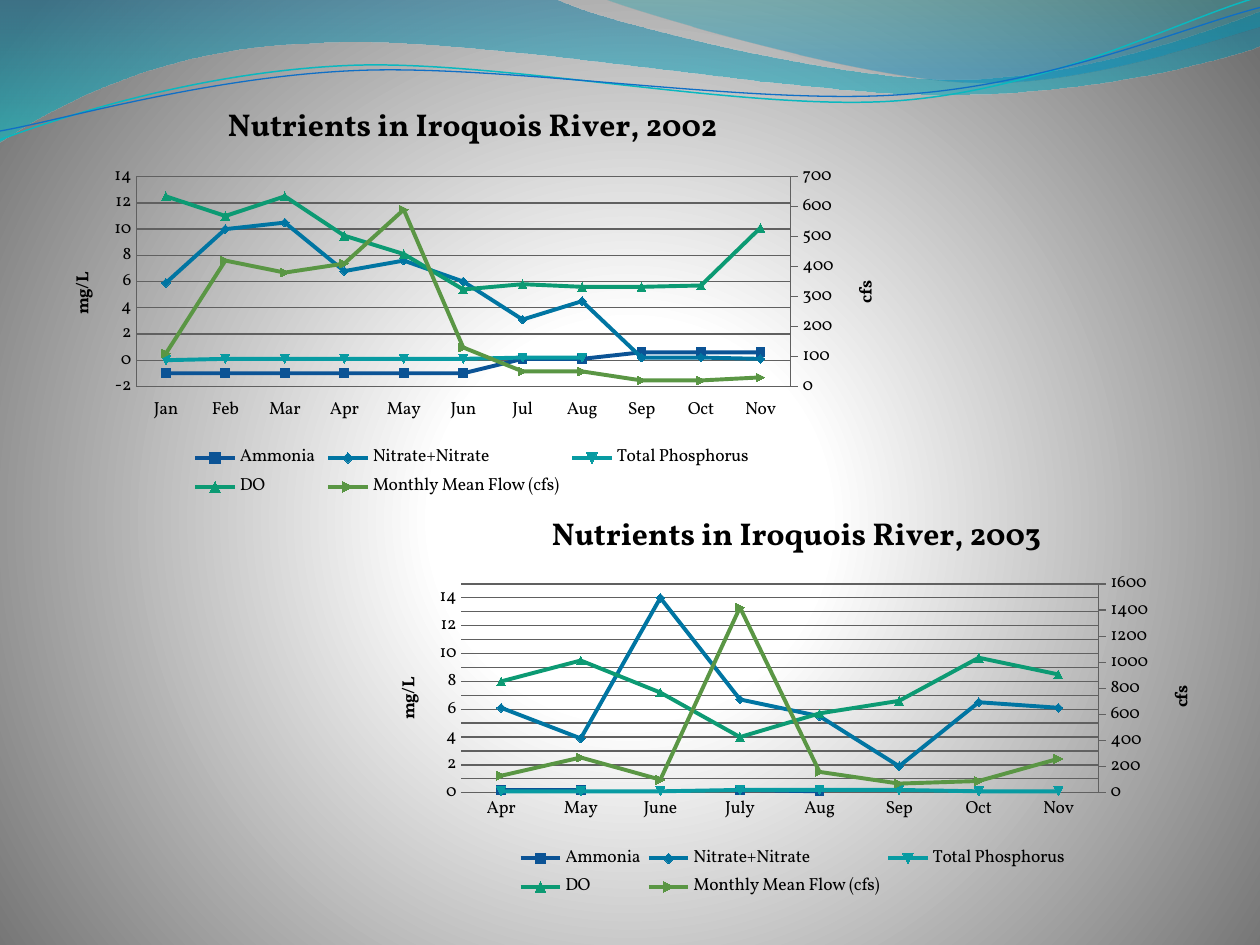
"""Build a slide with two nutrient charts for the Iroquois River under a wave banner."""
import copy
import math

import pptx
import pptx.chart.data
import pptx.dml.color
import pptx.enum.chart
import pptx.oxml
import pptx.oxml.ns
import pptx.util

Inches, Pt = pptx.util.Inches, pptx.util.Pt
hue = pptx.dml.color.RGBColor.from_string
qn, nsdecls = pptx.oxml.ns.qn, pptx.oxml.ns.nsdecls
kinds = pptx.enum.chart


def fade(node, stops, way):
    marks = "".join(
        f'<a:gs pos="{pos * 1000}"><a:srgbClr val="{tone}"><a:alpha val="{alpha * 1000}"/></a:srgbClr></a:gs>'
        for pos, tone, alpha in stops)
    old = node.find(".//" + qn("a:gradFill"))
    old.getparent().replace(old, pptx.oxml.parse_xml(
        f'<a:gradFill {nsdecls("a")} rotWithShape="1"><a:gsLst>{marks}</a:gsLst>{way}</a:gradFill>'))


def place(node, prior, spot):
    for old in node.findall(qn("c:layout")):
        node.remove(old)
    mode = '<c:layoutTarget val="inner"/>' if prior is None else ""
    mode += '<c:xMode val="edge"/><c:yMode val="edge"/>'
    sides = "".join(f'<c:{key} val="{size}"/>' for key, size in zip("xywh", spot))
    layout = pptx.oxml.parse_xml(
        f'<c:layout {nsdecls("c")}><c:manualLayout>{mode}{sides}</c:manualLayout></c:layout>')
    if prior is None:
        node.insert(0, layout)
    else:
        node.find(qn(prior)).addnext(layout)


deck = pptx.Presentation()
deck.slide_width, deck.slide_height = Inches(10), Inches(7.5)
slide = deck.slides.add_slide(deck.slide_layouts[6])
slide.background.fill.gradient()
fade(slide._element, [(0, "FFFFFF", 100), (25, "FFFFFF", 100), (100, "707070", 100)],
     '<a:path path="circle"><a:fillToRect l="10000" t="110000" r="10000" b="100000"/></a:path>')

waves = [
    ([(0, 0), (4.4, -0.01), (4.76, 0.17, 6.64, 0.63, 7.58, 0.63), (8.53, 0.63, 9.58, 0.26, 10, 0.09),
      (10.01, 0.36), (9.83, 0.44, 8.7, 0.76, 7.46, 0.75), (6.22, 0.75, 3.82, 0.28, 2.57, 0.34),
      (1.29, 0.36, 0.46, 0.83, -0.01, 1.13)], [(0, "0074A1", 45), (100, "00C6CF", 55)], None, 0),
    ([(4.79, -0.01), (5.09, 0.11, 6.82, 0.62, 7.69, 0.65), (8.56, 0.69, 9.61, 0.32, 10, 0.21),
      (10, 0)], [(0, "00A1A9", 30), (80, "008BBF", 45)], None, 0),
    ([(0, 1.11), (0.48, 0.93, 1.58, 0.57, 2.77, 0.52), (3.95, 0.47, 5.93, 0.89, 7.13, 0.8),
      (8.33, 0.71, 9.38, 0.15, 9.98, -0.02)], None, ("0AB8BF", 0.85), -2.7),
    ([(0, 1.04), (0.47, 0.96, 1.64, 0.61, 2.83, 0.56), (4.03, 0.51, 5.97, 0.84, 7.17, 0.75),
      (8.36, 0.67, 9.41, 0.21, 10, 0.06)], None, ("0F6FC6", 0.75), -2.7),
]
for parts, stops, stroke, tilt in waves:
    cos, sin = math.cos(math.radians(-tilt)), math.sin(math.radians(-tilt))
    midx, midy = 5, 0.58
    dots = []
    for part in parts:
        for x, y in zip(part[::2], part[1::2]):
            dx, dy = x - midx, y - midy
            dots.append((Inches(midx + dx * cos - dy * sin), Inches(midy + dx * sin + dy * cos)))
    pen = slide.shapes.build_freeform(*dots[0])
    pen.add_line_segments(dots[1:], close=stops is not None)
    wave = pen.convert_to_shape()
    legs = iter(wave._element.findall(".//" + qn("a:lnTo")))
    for part in parts[1:]:
        leg = next(legs)
        if len(part) == 6:
            curve = pptx.oxml.parse_xml(f'<a:cubicBezTo {nsdecls("a")}/>')
            leg.addprevious(curve)
            for piece in (leg, next(legs), next(legs)):
                curve.append(piece[0])
                piece.getparent().remove(piece)
    wave.rotation = tilt
    wave.shadow.inherit = False
    if stops:
        wave.line.fill.background()
        wave.fill.gradient()
        fade(wave._element, stops, '<a:lin ang="5400000" scaled="0"/>')
    else:
        wave.fill.background()
        wave.line.color.rgb = hue(stroke[0])
        wave.line.width = Pt(stroke[1])

names = ["Ammonia", "Nitrate+Nitrate", "Total Phosphorus", "DO", "Monthly Mean Flow (cfs)"]
tones = ["0B5395", "0075A2", "089BA2", "0C9A73", "5A9644"]
ticks = kinds.XL_TICK_LABEL_POSITION
charts = [
    {"year": 2002, "box": (0.33, 0.67, 6.83, 3.33), "plot": (0.11, 0.22, 0.76, 0.5),
     "left": (-2, 14, 2), "right": (0, 700, 100), "form": "General", "spot": ticks.LOW,
     "cats": "Jan Feb Mar Apr May Jun Jul Aug Sep Oct Nov".split(),
     "rows": [[-1, -1, -1, -1, -1, -1, 0.1, 0.1, 0.6, 0.6, 0.6],
              [5.9, 10, 10.5, 6.8, 7.6, 6, 3.1, 4.5, 0.2, 0.2, 0.1],
              [0, 0.1, 0.1, 0.1, 0.1, 0.1, 0.2, 0.2, None, None, None],
              [12.5, 11, 12.5, 9.5, 8.1, 5.4, 5.8, 5.6, 5.6, 5.7, 10.1],
              [110, 420, 380, 410, 590, 130, 50, 50, 20, 20, 30]]},
    {"year": 2003, "box": (2.92, 3.92, 6.74, 3.25), "plot": (0.11, 0.22, 0.75, 0.51),
     "left": (0, 15, 1), "right": (0, 1600, 200), "form": "0", "spot": ticks.NEXT_TO_AXIS,
     "cats": "Apr May June July Aug Sep Oct Nov".split(),
     "rows": [[0.2, 0.2, None, 0.2, 0.1, None, None, None],
              [6.1, 3.9, 14, 6.7, 5.5, 1.9, 6.5, 6.1],
              [0.1, 0.1, 0.1, 0.2, 0.2, 0.2, 0.1, 0.1],
              [8, 9.5, 7.2, 4, 5.7, 6.6, 9.7, 8.5],
              [130, 270, 100, 1420, 160, 70, 90, 260]]},
]
for item in charts:
    data = pptx.chart.data.CategoryChartData()
    data.categories = item["cats"]
    for name, row in zip(names, item["rows"]):
        data.add_series(name, row)
    box = [Inches(side) for side in item["box"]]
    chart = slide.shapes.add_chart(kinds.XL_CHART_TYPE.LINE_MARKERS, *box, data).chart
    chart.font.name, chart.font.size = "Vollkorn", Pt(10)
    chart.font.color.rgb = hue("000000")
    chart.plots[0].vary_by_categories = False
    for line, tone in zip(chart.plots[0].series, tones):
        line.smooth = False
        line.format.line.color.rgb = hue(tone)
        line.format.line.width = Pt(2.25)

    chart.has_legend = True
    chart.legend.position = kinds.XL_LEGEND_POSITION.BOTTOM
    chart.legend.include_in_layout = False
    place(chart.legend._element, "c:legendPos", (0.17, 0.85, 0.66, 0.15))

    cat, val = chart.category_axis, chart.value_axis
    cat.tick_label_position = item["spot"]
    val.minimum_scale, val.maximum_scale, val.major_unit = item["left"]
    val.tick_labels.number_format = item["form"]
    val.tick_labels.number_format_is_linked = False
    val.has_major_gridlines = True
    for rule in (cat.format.line, val.format.line, val.major_gridlines.format.line):
        rule.color.rgb = hue("606060")
        rule.width = Pt(0.75)
    for axis in (cat, val):
        axis.major_tick_mark = axis.minor_tick_mark = kinds.XL_TICK_MARK.NONE

    chart.has_title = val.has_title = True
    heads = [(chart.chart_title, f"Nutrients in Iroquois River, {item['year']}", 18, (0.21, 0.03)),
             (val.axis_title, "mg/L", 10, (0.03, 0.44))]
    for head, text, size, spot in heads:
        head.text_frame.text = text
        font = head.text_frame.paragraphs[0].font
        font.name, font.size, font.bold = "Vollkorn", Pt(size), True
        font.color.rgb = hue("000000")
        place(head._element, "c:tx", spot)
    turn = val.axis_title.text_frame._txBody.find(qn("a:bodyPr"))
    turn.set("rot", "-5400000")
    turn.set("vert", "horz")

    main = chart.plots[0]._element
    area = main.getparent()
    place(area, None, item["plot"])
    flow = copy.deepcopy(main)
    main.remove(main.findall(qn("c:ser"))[-1])
    for line in flow.findall(qn("c:ser"))[:-1]:
        flow.remove(line)
    main.addnext(flow)
    base, side = copy.deepcopy(cat._element), copy.deepcopy(val._element)
    for ref, code in zip(flow.findall(qn("c:axId")), ("5001", "5002")):
        ref.set("val", code)
    for node, own, other in ((base, "5001", "5002"), (side, "5002", "5001")):
        node.find(qn("c:axId")).set("val", own)
        node.find(qn("c:crossAx")).set("val", other)
    base.find(qn("c:delete")).set("val", "1")
    side.remove(side.find(qn("c:majorGridlines")))
    side.find(qn("c:axPos")).set("val", "r")
    side.find(qn("c:crosses")).set("val", "max")
    side.find(".//" + qn("a:t")).text = "cfs"
    place(side.find(qn("c:title")), "c:tx", (0.94, 0.46))
    val._element.addnext(side)
    side.addnext(base)
    right = type(val)(side)
    right.minimum_scale, right.maximum_scale, right.major_unit = item["right"]
    right.major_tick_mark = kinds.XL_TICK_MARK.OUTSIDE
    if item["year"] == 2003:
        val.format.line.fill.background()

deck.save("out.pptx")
